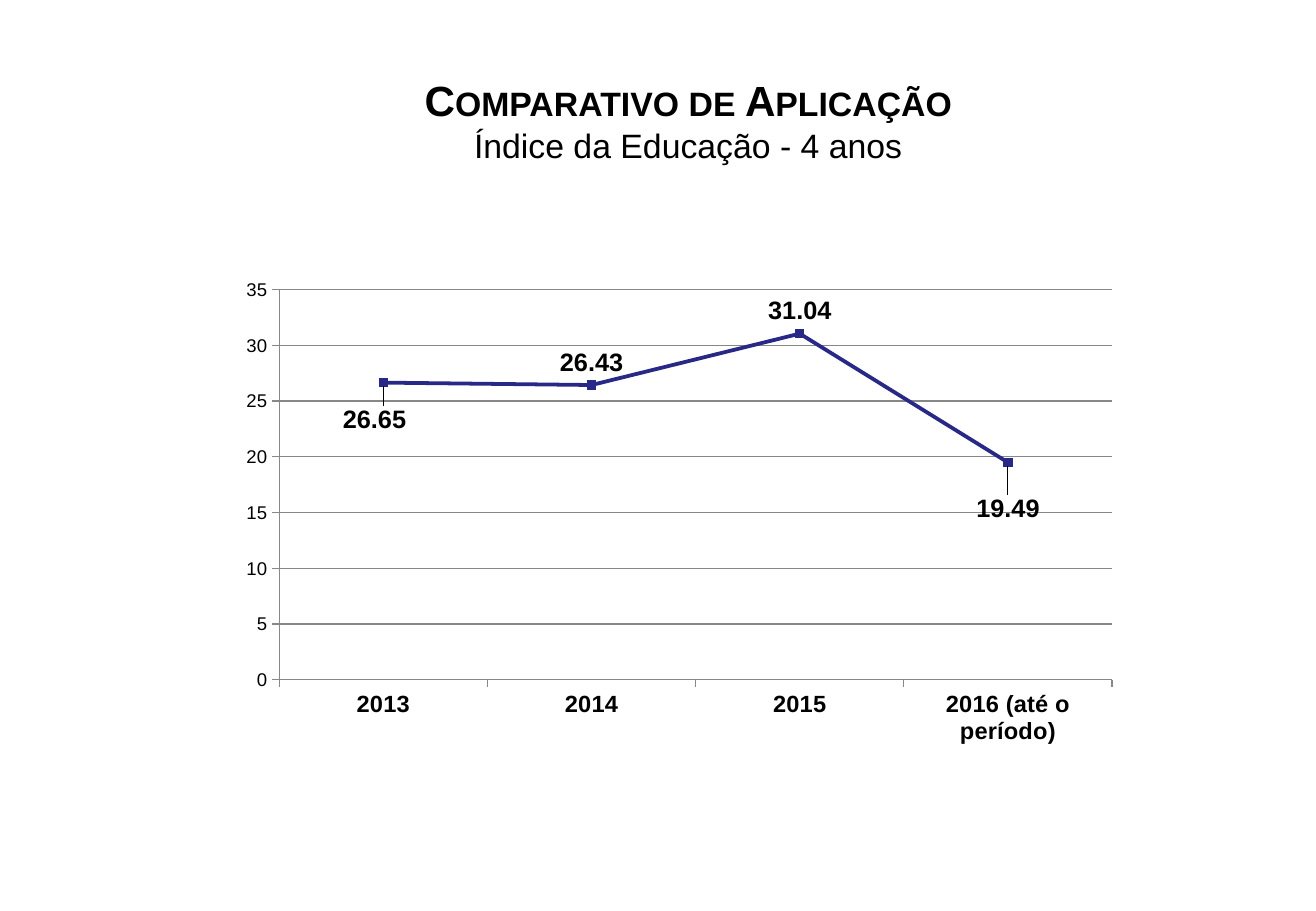
from dataclasses import dataclass

import pptx
import pptx.chart.data
import pptx.dml.color
import pptx.enum.chart
import pptx.enum.text
import pptx.oxml
import pptx.oxml.ns
import pptx.util

Pt = pptx.util.Pt
Color = pptx.dml.color.RGBColor
Position = pptx.enum.chart.XL_LABEL_POSITION


@dataclass(frozen=True)
class Theme:
    font: str = "Arial"
    text: Color = Color(0x00, 0x00, 0x00)
    line: Color = Color(0x28, 0x28, 0x86)
    grid: Color = Color(0x87, 0x87, 0x87)
    title: int = 25
    subtitle: int = 20
    category: int = 14
    value: int = 11
    label: int = 15


@dataclass(frozen=True)
class YearIndex:
    year: str
    percent: float
    position: Position = Position.ABOVE
    shift_x: float = 0
    shift_y: float = 0


THEME = Theme()
YEARS = [
    YearIndex("2013", 26.65, Position.BELOW, -0.01, 0.03),
    YearIndex("2014", 26.43),
    YearIndex("2015", 31.04),
    YearIndex("2016 (até o período)", 19.49, Position.BELOW, 0, 0.05),
]


def format_font(font, size: float, bold: bool = False) -> None:
    font.name = THEME.font
    font.size = Pt(size)
    font.bold = bold
    font.color.rgb = THEME.text


def add_span(para, text: str, *, size: float, bold: bool = False, small_caps: bool = False) -> None:
    span = para.add_run()
    span.text = text
    format_font(span.font, size, bold)
    if small_caps:
        span._r.get_or_add_rPr().set("cap", "small")


def manual_layout(**values: float | str):
    namespaces = pptx.oxml.ns.nsdecls("c")
    parts = "".join(f'<c:{name} val="{value}"/>' for name, value in values.items())
    return pptx.oxml.parse_xml(
        f"<c:layout {namespaces}><c:manualLayout>{parts}</c:manualLayout></c:layout>"
    )


def add_title(page) -> None:
    box = page.shapes.add_textbox(Pt(198.7), Pt(26), Pt(418.3), Pt(90))
    box.text_frame.word_wrap = True
    box.text_frame.vertical_anchor = pptx.enum.text.MSO_ANCHOR.MIDDLE
    para = box.text_frame.paragraphs[0]
    para.alignment = pptx.enum.text.PP_ALIGN.CENTER
    add_span(para, "Comparativo de Aplicação", size=THEME.title, bold=True, small_caps=True)
    para.add_line_break()
    add_span(para, "Índice da Educação - 4 anos", size=THEME.subtitle)


def format_axis(axis, size: float, bold: bool = False) -> None:
    format_font(axis.tick_labels.font, size, bold)
    axis.format.line.color.rgb = THEME.grid
    axis.format.line.width = Pt(0.75)
    axis.major_tick_mark = pptx.enum.chart.XL_TICK_MARK.OUTSIDE
    axis.minor_tick_mark = pptx.enum.chart.XL_TICK_MARK.NONE


def format_series(series) -> None:
    series.smooth = False
    series.format.line.color.rgb = THEME.line
    series.format.line.width = Pt(2.25)
    series.marker.style = pptx.enum.chart.XL_MARKER_STYLE.SQUARE
    series.marker.size = 5
    series.marker.format.fill.solid()
    series.marker.format.fill.fore_color.rgb = THEME.line
    series.marker.format.line.color.rgb = THEME.line
    for index, entry in enumerate(YEARS):
        label = series.points[index].data_label
        format_font(label.font, THEME.label, bold=True)
        label.position = entry.position
        if entry.shift_x or entry.shift_y:
            marker = series._element.xpath(f"c:dLbls/c:dLbl/c:idx[@val='{index}']")[0]
            marker.addnext(manual_layout(x=entry.shift_x, y=entry.shift_y))


def add_index_chart(page) -> None:
    data = pptx.chart.data.CategoryChartData()
    data.categories = [entry.year for entry in YEARS]
    data.add_series("Series 1", [entry.percent for entry in YEARS])
    chart = page.shapes.add_chart(
        pptx.enum.chart.XL_CHART_TYPE.LINE_MARKERS, Pt(139), Pt(160.5), Pt(530.6), Pt(280.8), data
    ).chart
    format_font(chart.font, 18)
    chart.has_legend = False
    chart.has_title = False
    format_axis(chart.category_axis, THEME.category, bold=True)
    format_axis(chart.value_axis, THEME.value)
    chart.value_axis.minimum_scale = 0
    chart.value_axis.maximum_scale = 35
    chart.value_axis.major_unit = 5
    chart.value_axis.has_major_gridlines = True
    gridlines = chart.value_axis.major_gridlines.format.line
    gridlines.color.rgb = THEME.grid
    gridlines.width = Pt(0.75)
    chart.plots[0].vary_by_categories = False
    format_series(chart.plots[0].series[0])
    plot_area = chart._chartSpace.xpath("c:chart/c:plotArea")[0]
    for layout in plot_area.xpath("c:layout"):
        plot_area.remove(layout)
    plot_area.insert(
        0,
        manual_layout(
            layoutTarget="inner", xMode="edge", yMode="edge", x=0.05, y=0.04, w=0.93, h=0.83
        ),
    )


def main() -> None:
    deck = pptx.Presentation()
    deck.slide_width = Pt(779.76)
    deck.slide_height = Pt(540)
    page = deck.slides.add_slide(deck.slide_layouts[6])
    add_title(page)
    add_index_chart(page)
    deck.save("out.pptx")


if __name__ == "__main__":
    main()
